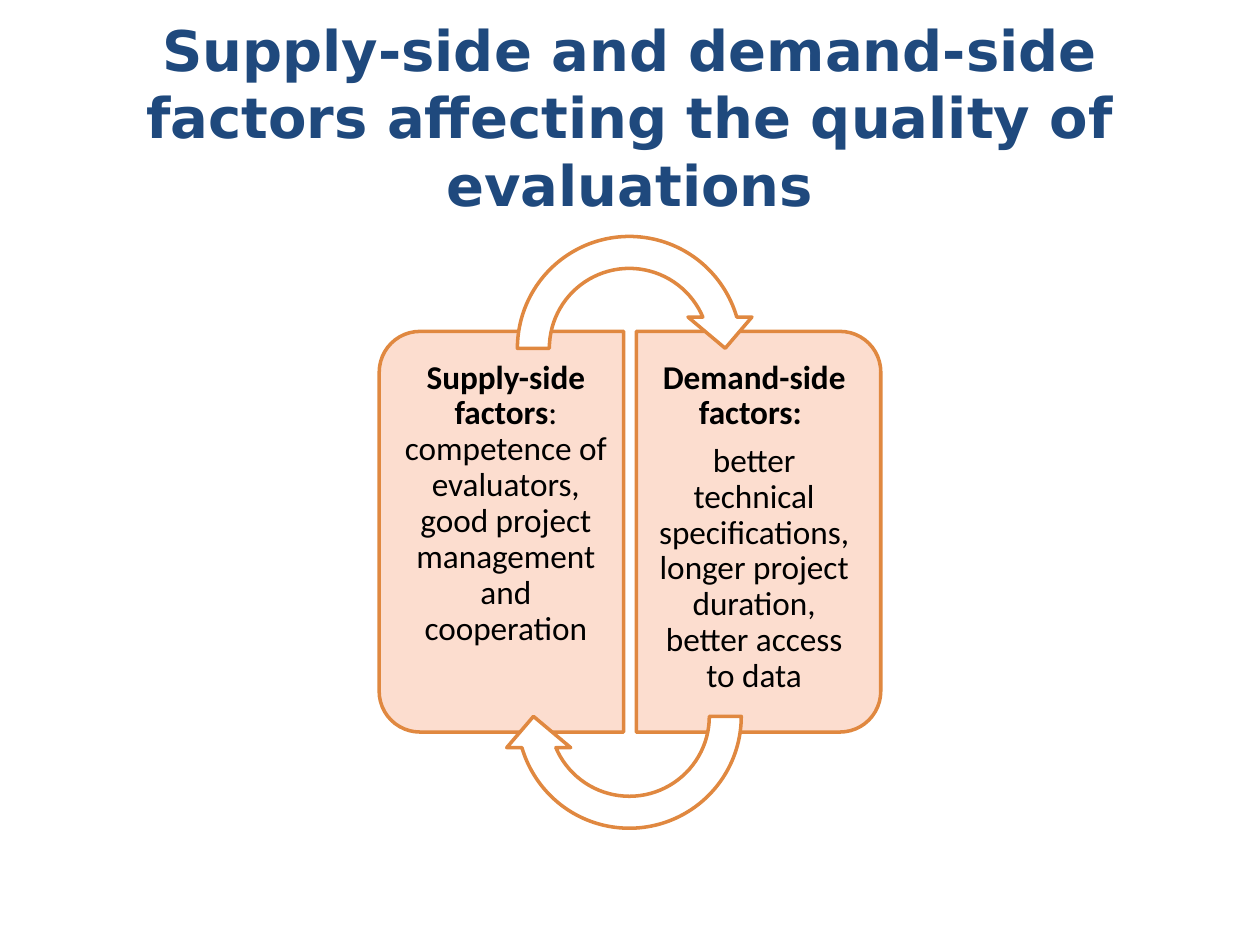
from pptx import Presentation
from pptx.dml.color import RGBColor
from pptx.enum.shapes import MSO_SHAPE
from pptx.enum.text import MSO_ANCHOR, MSO_AUTO_SIZE, PP_ALIGN
from pptx.util import Inches, Pt

ROUND_TOP = MSO_SHAPE.ROUND_2_SAME_RECTANGLE
CIRCULAR_ARROW = MSO_SHAPE.CIRCULAR_ARROW
MIDDLE, TOP = MSO_ANCHOR.MIDDLE, MSO_ANCHOR.TOP
NO_AUTOFIT = MSO_AUTO_SIZE.NONE
CENTER = PP_ALIGN.CENTER
TITLE_ONLY = 5

NAVY, BLACK, WHITE = "1F497D", "000000", "FFFFFF"
ORANGE, PEACH = "E08840", "FCDDCF"
TITLE = "Supply-side and demand-side factors affecting the quality of evaluations"
SUPPLY = [[("Supply-side factors", True),
           (": competence of evaluators, good project management and cooperation", False)]]
DEMAND = [[("Demand-side factors: ", True)],
          [("better technical specifications, longer project duration, "
            "better access to data", False)]]

CARD_W, CARD_H, CARD_TOP = 1.94, 3.18, 2.63
SUPPLY_LEFT, DEMAND_LEFT = 3.01, 5.05
ARROW_LEFT, ARROW_SIZE = 3.98, 2.03
ARROW_ADJUSTMENTS = (0.125, 11.42, 204.58, 108, 0.125)


def rgb(value):
    """Turn a hex string into a colour."""
    return RGBColor.from_string(value)


def set_values(target, values):
    """Set each attribute named in a dict of format values."""
    for name, value in values.items():
        setattr(target, name, value)


def write_run(paragraph, text, size, font_name, color, bold):
    """Add one formatted run to a paragraph."""
    run = paragraph.add_run()
    run.text = text
    set_values(run.font, {"size": Pt(size), "name": font_name, "bold": bold})
    run.font.color.rgb = rgb(color)


def add_outlined(slide, kind, box, rotation, fill, adjustments):
    """Add an orange-outlined preset shape in a box of inches."""
    outlined = slide.shapes.add_shape(kind, *map(Inches, box))
    outlined.rotation = rotation
    outlined.shadow.inherit = False
    outlined.fill.solid()
    outlined.fill.fore_color.rgb = rgb(fill)
    outlined.line.color.rgb = rgb(ORANGE)
    outlined.line.width = Pt(2)
    for index, value in enumerate(adjustments):
        outlined.adjustments[index] = value


def add_title(slide, box):
    """Place and format the slide title."""
    title = slide.shapes.title
    set_values(title, dict(zip(("left", "top", "width", "height"), map(Inches, box))))
    set_values(title.text_frame, {"word_wrap": True, "auto_size": NO_AUTOFIT,
                                  "vertical_anchor": MIDDLE})
    heading = title.text_frame.paragraphs[0]
    heading.alignment = CENTER
    write_run(heading, TITLE, 32, "DejaVu Sans", NAVY, True)


def add_card(slide, box, rotation, text_left, insets, paragraphs):
    """Place a factor card, turned so its round corners face outward, and its text."""
    left, top, width, height = box
    shift = (height - width) / 2
    add_outlined(slide, ROUND_TOP, (left - shift, top + shift, height, width),
                 rotation, PEACH, (0.167, 0))
    factors = slide.shapes.add_textbox(Inches(text_left), Inches(top + 0.1),
                                       Inches(width - 0.09), Inches(height - 0.19))
    frame = factors.text_frame
    set_values(frame, {"word_wrap": True, "auto_size": NO_AUTOFIT, "vertical_anchor": TOP,
                       "margin_left": Inches(insets[0]), "margin_right": Inches(insets[1]),
                       "margin_top": Inches(0.13), "margin_bottom": Inches(0.13)})
    for index, runs in enumerate(paragraphs):
        paragraph = frame.add_paragraph() if index else frame.paragraphs[0]
        set_values(paragraph, {"alignment": CENTER, "line_spacing": 0.9,
                               "space_after": Pt(6.5)})
        for text, bold in runs:
            write_run(paragraph, text, 19, "Calibri", BLACK, bold)


def add_cycle_arrow(slide, box, rotation):
    """Place one arrow of the cycle linking the two cards."""
    add_outlined(slide, CIRCULAR_ARROW, box, rotation, WHITE, ARROW_ADJUSTMENTS)


def main():
    """Build and save the slide."""
    deck = Presentation()
    deck.slide_width, deck.slide_height = Inches(10), Inches(7.5)
    slide = deck.slides.add_slide(deck.slide_layouts[TITLE_ONLY])
    add_title(slide, (0.5, 0.3, 9, 1.25))
    add_card(slide, (SUPPLY_LEFT, CARD_TOP, CARD_W, CARD_H), 270, 3.11, (0.08, 0.12), SUPPLY)
    add_card(slide, (DEMAND_LEFT, CARD_TOP, CARD_W, CARD_H), 90, 5.04, (0.12, 0.08), DEMAND)
    for top, rotation in ((1.75, 0), (4.67, 180)):
        add_cycle_arrow(slide, (ARROW_LEFT, top, ARROW_SIZE, ARROW_SIZE), rotation)
    deck.save("out.pptx")


if __name__ == "__main__":
    main()
